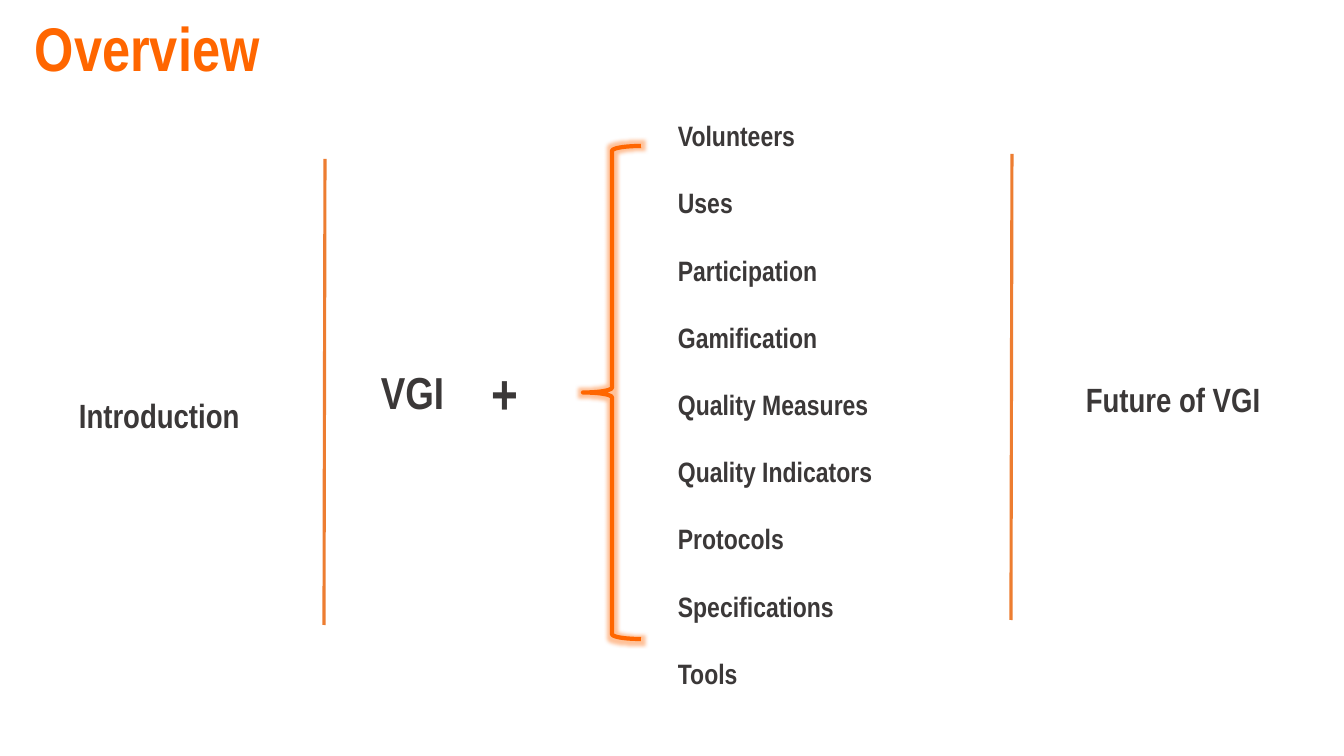
import pptx
import pptx.util
import pptx.dml.color
import pptx.enum.shapes
import pptx.enum.text
import lxml.etree

PX = 914400 / 100.8
ORANGE = pptx.dml.color.RGBColor(0xFF, 0x66, 0x00)
DIVIDER_ORANGE = pptx.dml.color.RGBColor(0xED, 0x7D, 0x31)
CHARCOAL = pptx.dml.color.RGBColor(0x3B, 0x38, 0x38)
DRAWING_NS = "http://schemas.openxmlformats.org/drawingml/2006/main"


def px(*lengths):
    return [pptx.util.Emu(round(length * PX)) for length in lengths]


def add_label(box, lines, size, color=CHARCOAL, spacing=None, wrap=True):
    frame = slide.shapes.add_textbox(*px(*box)).text_frame
    frame.word_wrap = wrap
    frame.auto_size = pptx.enum.text.MSO_AUTO_SIZE.SHAPE_TO_FIT_TEXT
    frame.text = "\n".join(lines)
    for paragraph in frame.paragraphs:
        paragraph.line_spacing = spacing
        paragraph.font.name = "Arial Narrow"
        paragraph.font.size = pptx.util.Pt(size)
        paragraph.font.bold = True
        paragraph.font.color.rgb = color


presentation = pptx.Presentation()
presentation.slide_width, presentation.slide_height = px(1344, 756)
slide = presentation.slides.add_slide(presentation.slide_layouts[6])

add_label((25, 5, 1318, 85), ["Overview"], 44, color=ORANGE)
add_label((69, 329, 276, 94), ["Introduction"], 24, spacing=2.5)
add_label((371, 360, 137, 65), ["VGI"], 32)

topic_brace = slide.shapes.add_shape(
    pptx.enum.shapes.MSO_SHAPE.LEFT_BRACE, *px(583, 146, 58, 493))
topic_brace.shadow.inherit = False
topic_brace.fill.background()
topic_brace.line.color.rgb = ORANGE
topic_brace.line.width = pptx.util.Pt(3)
effects = topic_brace._element.spPr.find(f"{{{DRAWING_NS}}}effectLst")
glow = lxml.etree.SubElement(effects, f"{{{DRAWING_NS}}}glow", rad="63500")
glow_color = lxml.etree.SubElement(glow, f"{{{DRAWING_NS}}}srgbClr", val=str(ORANGE))
lxml.etree.SubElement(glow_color, f"{{{DRAWING_NS}}}alpha", val="40000")

topics = ["Volunteers", "Uses", "Participation", "Gamification", "Quality Measures",
          "Quality Indicators", "Protocols", "Specifications", "Tools"]
add_label((668, 80, 317, 621), topics, 20, spacing=2.0)
add_label((482, 354, 74, 78), ["+"], 40)
add_label((1076, 354, 197, 64), ["Future of VGI"], 24, spacing=1.5, wrap=False)

for right, top in [(325, 159), (1012, 154)]:
    divider = slide.shapes.add_connector(
        pptx.enum.shapes.MSO_CONNECTOR.STRAIGHT, *px(right, top, right - 1, top + 466))
    divider.line.color.rgb = DIVIDER_ORANGE
    divider.line.width = pptx.util.Pt(2.25)
    lxml.etree.SubElement(divider._element.spPr, f"{{{DRAWING_NS}}}effectLst")

presentation.save("out.pptx")
